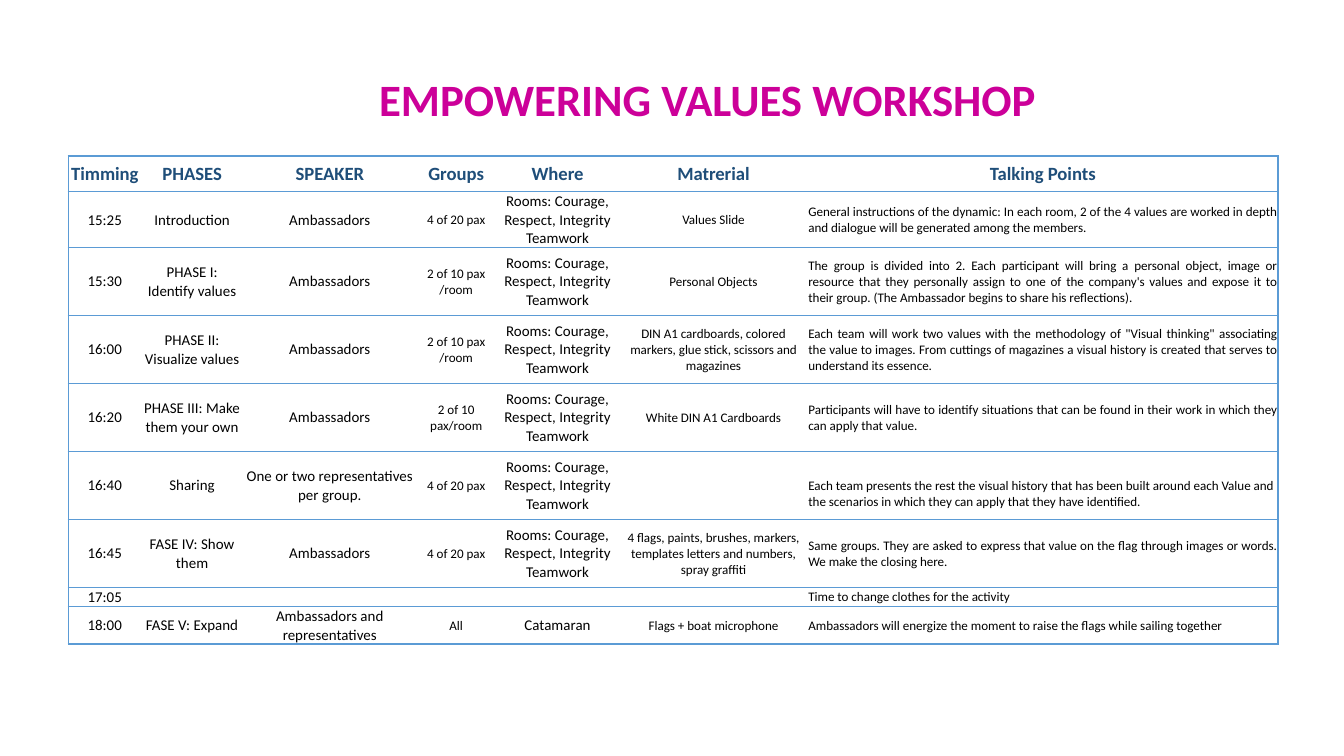
from dataclasses import dataclass
from itertools import product

from lxml import etree
from pptx import Presentation
from pptx import util as u
from pptx.dml.color import RGBColor
from pptx.enum import text
from pptx.oxml.ns import qn

INK = {"title": "CC0099", "head": "1F4E79", "body": "000000",
       "line": "5B9BD5", "cell": "FFFFFF"}
FONT = "Calibri"
WIDE = u.Inches(10)
HIGH = WIDE * 9 // 16
UNIT = WIDE // 1000
COLS = [54, 76, 129, 59, 92, 140, 350]
ROWS = [26.5, 38, *[50.6] * 5, 13, 25]
SIZES = [8, 8, 8, 7, 8, 7, 7]
HEADS = ["Timming", "PHASES", "SPEAKER", "Groups", "Where", "Matrerial",
         "Talking Points"]
ROOMS = "Rooms: Courage, Respect, Integrity Teamwork"
TEAM = "Ambassadors"
FOUR = "4 of 20 pax"
TWO = "2 of 10 pax /room"
PAD = 0.6


@dataclass
class Step:
    time: str
    phase: str = ""
    lead: str = ""
    group: str = ""
    where: str = ""
    kit: str = ""
    talk: str = ""
    drop: float = PAD
    align: text.PP_ALIGN = text.PP_ALIGN.JUSTIFY

    def texts(self) -> list[str]:
        return [self.time, self.phase, self.lead, self.group, self.where,
                self.kit, self.talk]


STEPS = [
    Step("15:25", "Introduction", TEAM, FOUR, ROOMS, "Values Slide",
         "General instructions of the dynamic: In each room, 2 of the 4 values are "
         "worked in depth and dialogue will be generated among the members."),
    Step("15:30", "PHASE I: Identify values", TEAM, TWO, ROOMS, "Personal Objects",
         "The group is divided into 2. Each participant will bring a personal object, "
         "image or resource that they personally assign to one of the company's values "
         "and expose it to their group. (The Ambassador begins to share his reflections)."),
    Step("16:00", "PHASE II: Visualize values", TEAM, TWO, ROOMS,
         "DIN A1 cardboards, colored markers, glue stick, scissors and magazines",
         "Each team will work two values with the methodology of \"Visual thinking\" "
         "associating the value to images. From cuttings of magazines a visual history "
         "is created that serves to understand its essence."),
    Step("16:20", "PHASE III: Make them your own", TEAM, "2 of 10 pax/room", ROOMS,
         "White DIN A1 Cardboards",
         "Participants will have to identify situations that can be found in their work "
         "in which they can apply that value."),
    Step("16:40", "Sharing", "One or two representatives per group.", FOUR, ROOMS,
         talk="Each team presents the rest the visual history that has been built around "
         "each Value and the scenarios in which they can apply that they have identified.",
         drop=12.5, align=text.PP_ALIGN.LEFT),
    Step("16:45", "FASE IV: Show them", TEAM, FOUR, ROOMS,
         "4 flags, paints, brushes, markers, templates letters and numbers, spray graffiti",
         "Same groups. They are asked to express that value on the flag through images "
         "or words. We make the closing here."),
    Step("17:05", talk="Time to change clothes for the activity"),
    Step("18:00", "FASE V: Expand", "Ambassadors and representatives", "All",
         "Catamaran", "Flags + boat microphone",
         "Ambassadors will energize the moment to raise the flags while sailing together"),
]


def span(count: float) -> int:
    return round(count * UNIT)


def style(para, size: int, ink: str, bold: bool) -> None:
    for run in para.runs:
        font = run.font
        font.name, font.size, font.bold = FONT, u.Pt(size), bold
        font.color.rgb = RGBColor.from_string(INK[ink])
    if not para.runs:
        end = etree.SubElement(para._p, qn("a:endParaRPr"))
        end.set("sz", str(size * 100))


def edge(cell, sides: str) -> None:
    props = cell._tc.get_or_add_tcPr()
    for spot, side in enumerate("LRTB"):
        line = etree.Element(qn(f"a:ln{side}"), w=str(u.Pt(1)))
        if side in sides:
            fill = etree.SubElement(line, qn("a:solidFill"))
            etree.SubElement(fill, qn("a:srgbClr"), val=INK["line"])
        else:
            etree.SubElement(line, qn("a:noFill"))
        props.insert(spot, line)


def write(cell, words: str, size: int, ink: str, bold: bool,
          align: text.PP_ALIGN, drop: float) -> None:
    cell.fill.solid()
    cell.fill.fore_color.rgb = RGBColor.from_string(INK["cell"])
    cell.vertical_anchor = text.MSO_ANCHOR.MIDDLE
    cell.margin_left = cell.margin_right = span(PAD)
    cell.margin_top, cell.margin_bottom = span(drop), 0
    cell.text_frame.text = words
    para = cell.text_frame.paragraphs[0]
    para.alignment = align
    style(para, size, ink, bold)


def add_title(slide) -> None:
    title = slide.shapes.title
    title.left, title.top, title.width, title.height = map(span, (272, 48, 514, 50))
    frame = title.text_frame
    frame.text = "EMPOWERING VALUES WORKSHOP"
    frame.word_wrap = False
    frame.vertical_anchor = text.MSO_ANCHOR.TOP
    frame.paragraphs[0].alignment = text.PP_ALIGN.LEFT
    style(frame.paragraphs[0], 24, "title", True)


def add_plan(slide) -> None:
    table = slide.shapes.add_table(
        len(ROWS), len(COLS), span(51), span(116),
        span(sum(COLS)), span(sum(ROWS))).table
    table.first_row = table.horz_banding = False
    for col, wide in zip(table.columns, COLS):
        col.width = span(wide)
    for row, high in zip(table.rows, ROWS):
        row.height = span(high)
    last = len(COLS) - 1
    for r, c in product(range(len(ROWS)), range(len(COLS))):
        cell = table.cell(r, c)
        mid = text.PP_ALIGN.CENTER
        if r == 0:
            write(cell, HEADS[c], 10, "head", True, mid, PAD)
        else:
            step = STEPS[r - 1]
            align, drop = (step.align, step.drop) if c == last else (mid, PAD)
            write(cell, step.texts()[c], SIZES[c], "body", False, align, drop)
        edge(cell, "TB" + "L" * (c == 0) + "R" * (c == last))


def main() -> None:
    deck = Presentation()
    deck.slide_width, deck.slide_height = WIDE, HIGH
    slide = deck.slides.add_slide(deck.slide_layouts[5])
    add_title(slide)
    add_plan(slide)
    deck.save("out.pptx")


if __name__ == "__main__":
    main()
